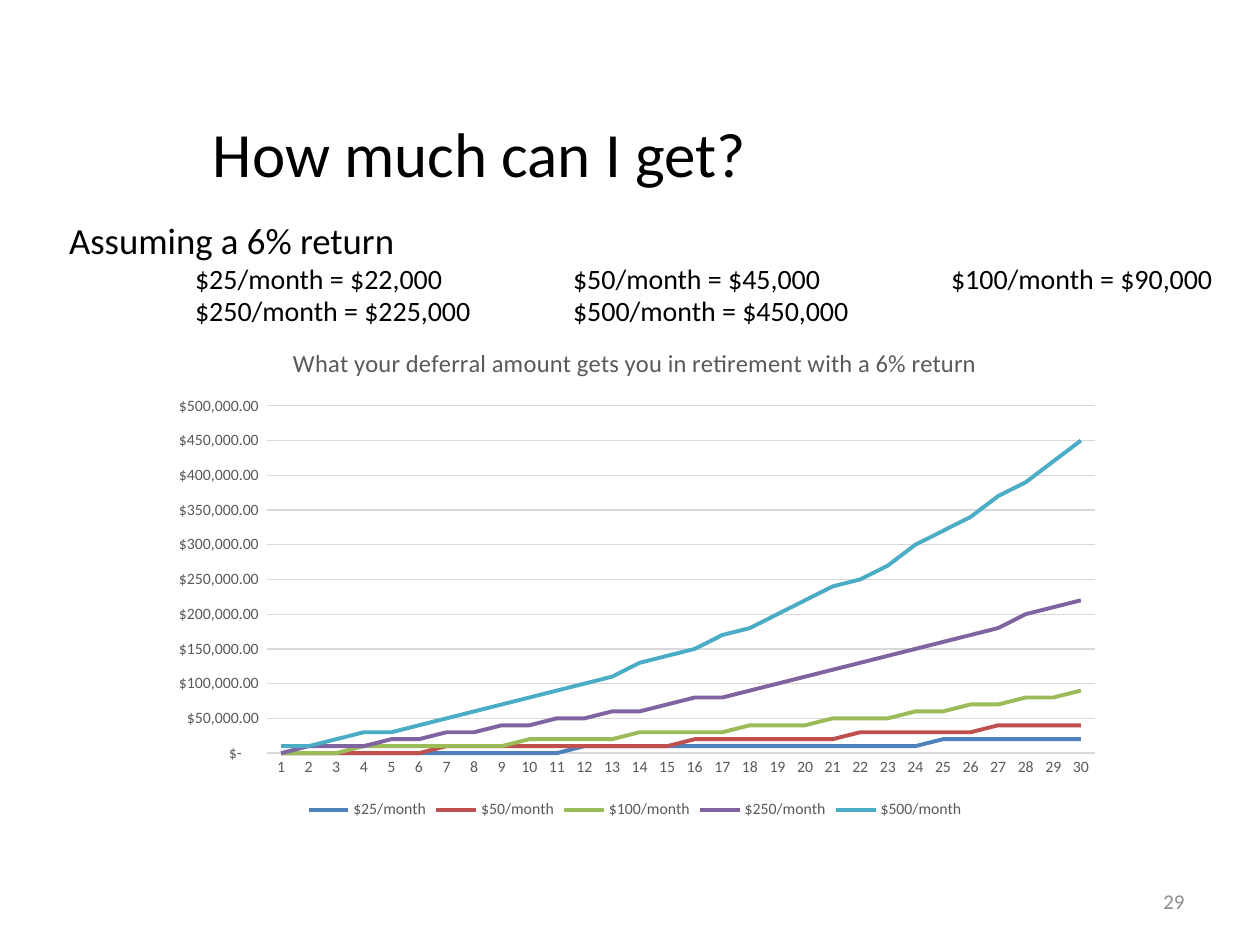
import lxml.etree
import pptx
import pptx.chart.data
import pptx.dml.color
import pptx.enum.chart
import pptx.enum.text
import pptx.oxml.ns
import pptx.util
from pptx.util import Inches

FONT = "Calibri"
BLACK, GREY, PALE, NUMBER_GREY = "000000", "595959", "D9D9D9", "8C8C8C"
LINE_COLORS = {25: "4F81BD", 50: "C0504D", 100: "9BBB59", 250: "8064A2", 500: "4BACC6"}
YEARS = range(1, 31)
YEARLY_GROWTH = 0.0545
FIRST_YEAR_FACTOR = 12.52
MONEY_FORMAT = r'_("$"* #,##0.00_);_("$"* \(#,##0.00\);_("$"* "-"??_);_(@_)'
OUTCOMES = [
    "\t$25/month = $22,000\t\t$50/month = $45,000\t\t$100/month = $90,000",
    "\t$250/month = $225,000\t$500/month = $450,000",
]


def rgb(color):
    return pptx.dml.color.RGBColor.from_string(color)


def style_font(font, size, color):
    font.name = FONT
    font.size = pptx.util.Pt(size)
    font.bold = False
    font.color.rgb = rgb(color)


def style_line(line, color, width):
    line.color.rgb = rgb(color)
    line.width = pptx.util.Pt(width)


def add_run(para, text, size, color):
    span = para.add_run()
    span.text = text
    style_font(span.font, size, color)


def add_frame(page, box, anchor):
    frame = page.shapes.add_textbox(*map(Inches, box)).text_frame
    frame.word_wrap = True
    frame.vertical_anchor = anchor
    return frame


def add_line_of_text(page, box, text, size, color, align):
    frame = add_frame(page, box, pptx.enum.text.MSO_ANCHOR.MIDDLE)
    frame.paragraphs[0].alignment = align
    add_run(frame.paragraphs[0], text, size, color)


def add_inch_tabs(para):
    """Set a left tab stop at every inch across the page."""
    tag = pptx.oxml.ns.qn
    stops = lxml.etree.SubElement(para._p.get_or_add_pPr(), tag("a:tabLst"))
    for inch in range(1, 9):
        lxml.etree.SubElement(stops, tag("a:tab"), pos=str(Inches(inch)), algn="l")


def add_assumptions(page, box):
    frame = add_frame(page, box, pptx.enum.text.MSO_ANCHOR.TOP)
    lines = [("Assuming a 6% return", 21)] + [(text, 16) for text in OUTCOMES]
    for index, (text, size) in enumerate(lines):
        para = frame.add_paragraph() if index else frame.paragraphs[0]
        para.line_spacing = 0.8
        para.space_before = pptx.util.Pt(3.2 if index else 0)
        para._p.get_or_add_pPr().set("marL", str(Inches(0.37)))
        add_inch_tabs(para)
        add_run(para, text, size, BLACK)


def savings(monthly, year):
    """Balance after a number of years of deposits, to the nearest ten thousand."""
    growth = ((1 + YEARLY_GROWTH) ** year - 1) / YEARLY_GROWTH
    return int(round(monthly * FIRST_YEAR_FACTOR * growth, -4))


def style_axis(axis):
    axis.major_tick_mark = pptx.enum.chart.XL_TICK_MARK.NONE
    axis.minor_tick_mark = pptx.enum.chart.XL_TICK_MARK.NONE
    style_font(axis.tick_labels.font, 9, GREY)


def add_savings_chart(page, box):
    data = pptx.chart.data.CategoryChartData()
    data.categories = [str(year) for year in YEARS]
    for monthly in LINE_COLORS:
        data.add_series(f"${monthly}/month", [savings(monthly, year) for year in YEARS])
    chart = page.shapes.add_chart(
        pptx.enum.chart.XL_CHART_TYPE.LINE, *map(Inches, box), data).chart
    style_font(chart.font, 10, BLACK)

    chart.has_title = True
    add_run(chart.chart_title.text_frame.paragraphs[0],
            "What your deferral amount gets you in retirement with a 6% return", 14, GREY)
    chart.chart_title.include_in_layout = False

    chart.has_legend = True
    chart.legend.position = pptx.enum.chart.XL_LEGEND_POSITION.BOTTOM
    chart.legend.include_in_layout = False
    style_font(chart.legend.font, 9, GREY)

    style_axis(chart.category_axis)
    style_line(chart.category_axis.format.line, PALE, 0.75)
    values = chart.value_axis
    style_axis(values)
    values.minimum_scale, values.maximum_scale, values.major_unit = 0, 500000, 50000
    values.tick_labels.number_format = MONEY_FORMAT
    values.tick_labels.number_format_is_linked = False
    values.format.line.fill.background()
    style_line(values.major_gridlines.format.line, PALE, 0.75)

    chart.plots[0].vary_by_categories = False
    for series, color in zip(chart.plots[0].series, LINE_COLORS.values()):
        series.smooth = False
        series.marker.style = pptx.enum.chart.XL_MARKER_STYLE.NONE
        style_line(series.format.line, color, 2.25)


def main():
    deck = pptx.Presentation()
    deck.slide_width, deck.slide_height = Inches(10), Inches(7.5)
    page = deck.slides.add_slide(deck.slide_layouts[6])
    align = pptx.enum.text.PP_ALIGN
    add_line_of_text(page, (1.59, 0.67, 8.41, 1.08), "How much can I get?", 36, BLACK, align.LEFT)
    add_assumptions(page, (0.08, 1.75, 9.92, 5.33))
    add_savings_chart(page, (1.24, 2.58, 7.6, 3.96))
    add_line_of_text(page, (7.17, 6.95, 2.33, 0.4), "29", 12, NUMBER_GREY, align.RIGHT)
    deck.save("out.pptx")


if __name__ == "__main__":
    main()
